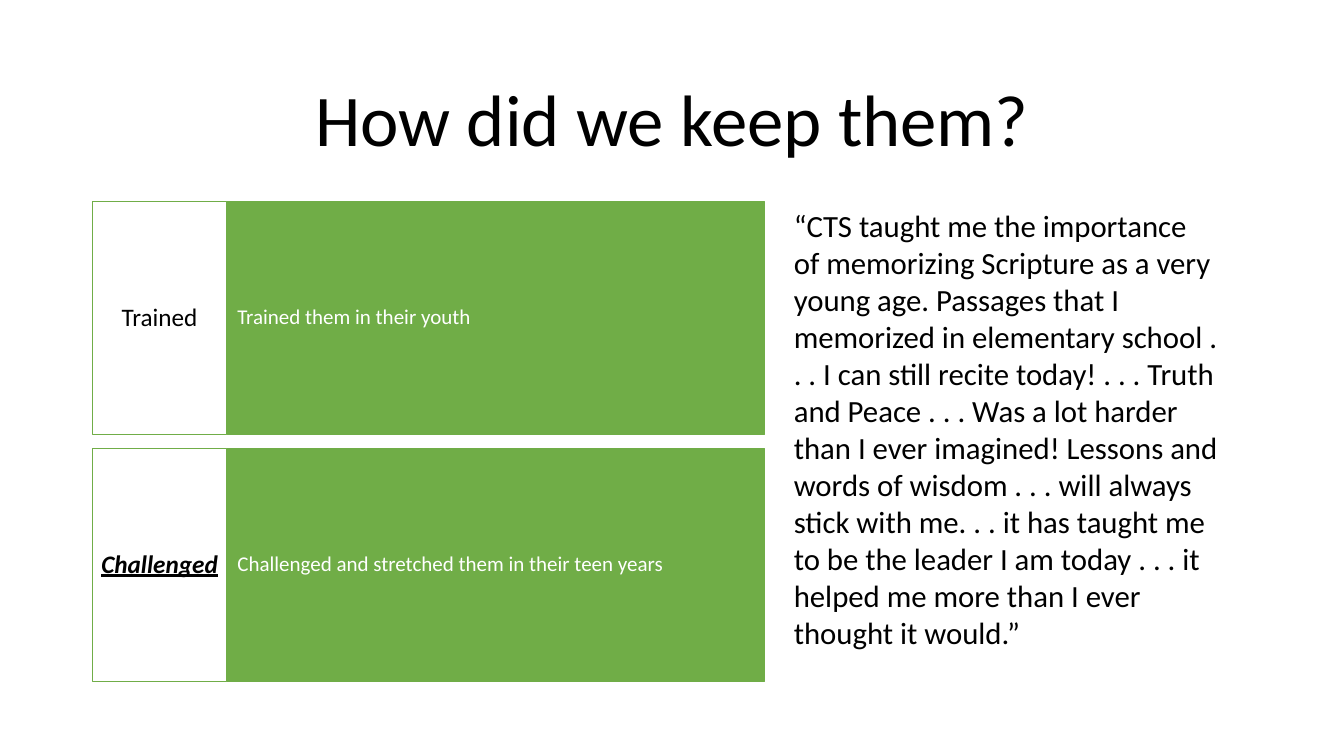
from pptx import Presentation
from pptx.dml.color import RGBColor
from pptx.enum.shapes import MSO_SHAPE as SHAPE
from pptx.enum.text import MSO_ANCHOR as ANCHOR, PP_ALIGN as ALIGN
from pptx.util import Pt

PX = 9525  # EMU per px, 96 px to the inch
FONT = "Calibri"
BLACK = RGBColor(0x00, 0x00, 0x00)
WHITE = RGBColor(0xFF, 0xFF, 0xFF)
GREEN = RGBColor(0x70, 0xAD, 0x47)

STEPS = [
    ("Trained", "Trained them in their youth", False),
    ("Challenged", "Challenged and stretched them in their teen years", True),
]
QUOTE = (
    "“CTS taught me the importance of memorizing Scripture as a very young age. "
    "Passages that I memorized in elementary school . . . I can still recite today! "
    ". . . Truth and Peace . . . Was a lot harder than I ever imagined! Lessons and "
    "words of wisdom . . . will always stick with me. . . it has taught me to be the "
    "leader I am today . . . it helped me more than I ever thought it would.”"
)


def px(*lengths):
    return [length * PX for length in lengths]


def write(sp, text, size, color, align=ALIGN.LEFT, anchor=ANCHOR.MIDDLE,
          spacing=0.9, inset=(10, 5), strong=False):
    tf = sp.text_frame
    tf.word_wrap = True
    tf.vertical_anchor = anchor
    side, end = px(*inset)
    tf.margin_left = tf.margin_right = side
    tf.margin_top = tf.margin_bottom = end
    p = tf.paragraphs[0]
    p.alignment = align
    p.line_spacing = spacing
    r = p.add_run()
    r.text = text
    font = r.font
    font.name, font.size = FONT, Pt(size)
    font.color.rgb = color
    if strong:
        font.bold = font.italic = font.underline = True


def add_title(slide, x, y, w, h):
    sp = slide.shapes.add_textbox(*px(x, y, w, h))
    write(sp, "How did we keep them?", 52, BLACK, ALIGN.CENTER)


def add_panel(slide, x, y, w, h, fill):
    sp = slide.shapes.add_shape(SHAPE.RECTANGLE, *px(x, y, w, h))
    sp.shadow.inherit = False
    sp.fill.solid()
    sp.fill.fore_color.rgb = fill
    sp.line.color.rgb = GREEN
    sp.line.width = Pt(1)
    return sp


def add_steps(slide, x, y, w, h, gap=13):
    row_h = (h - gap * (len(STEPS) - 1)) // len(STEPS)
    label_w = w // 5
    for i, (label, detail, strong) in enumerate(STEPS):
        top = y + i * (row_h + gap)
        # Green detail panel
        sp = add_panel(slide, x + label_w, top, w - label_w, row_h, GREEN)
        write(sp, detail, 15, WHITE, inset=(10, 56))
        # White label panel
        sp = add_panel(slide, x, top, label_w, row_h, WHITE)
        write(sp, label, 18, BLACK, ALIGN.CENTER, inset=(7, 22), strong=strong)


def add_quote(slide, x, y, w, h):
    sp = slide.shapes.add_textbox(*px(x, y, w, h))
    write(sp, QUOTE, 22, BLACK, anchor=ANCHOR.TOP, spacing=1.0)


def main():
    prs = Presentation()
    prs.slide_width, prs.slide_height = px(1280, 720)
    slide = prs.slides.add_slide(prs.slide_layouts[6])
    add_title(slide, 88, 58, 1104, 119)
    add_steps(slide, 88, 192, 640, 457)
    add_quote(slide, 746, 192, 425, 436)
    prs.save("out.pptx")


if __name__ == "__main__":
    main()
